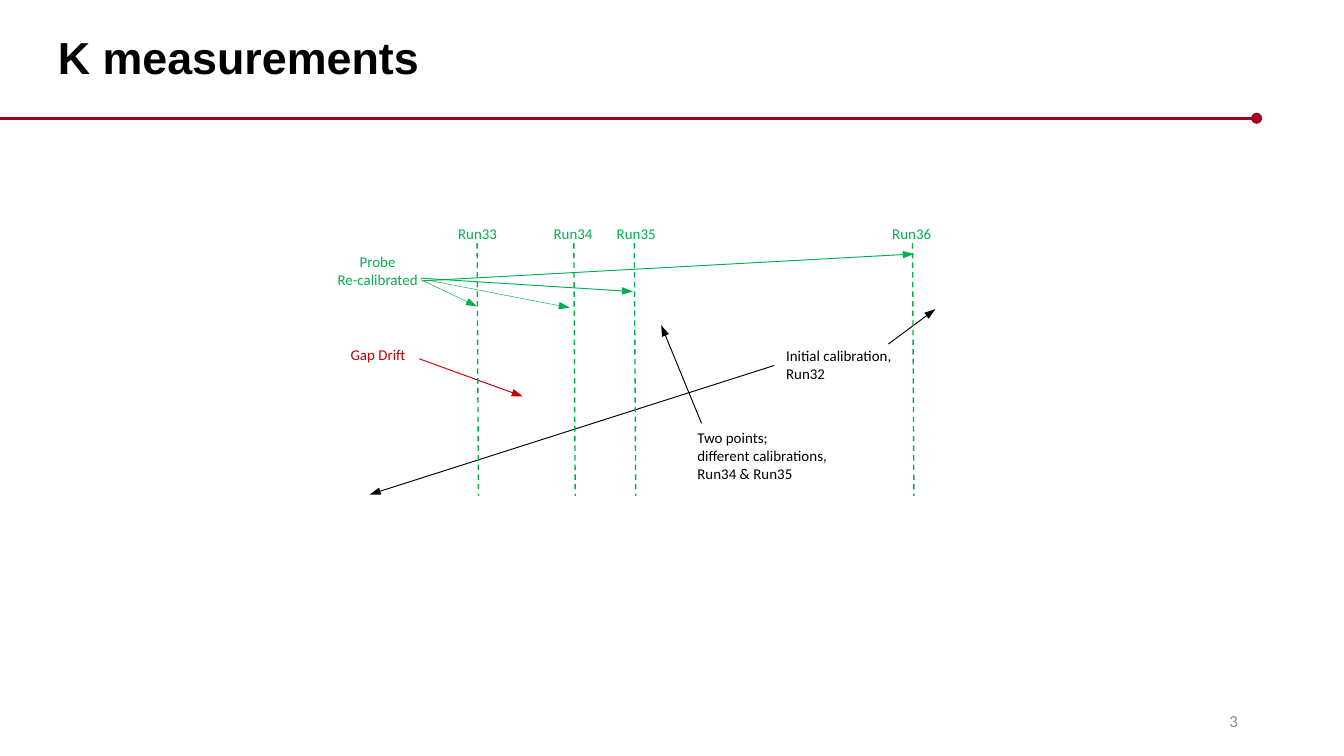
from typing import NamedTuple

from lxml import etree
from pptx import Presentation
from pptx import util as u
from pptx.dml.color import RGBColor
from pptx.enum import dml, shapes, text
from pptx.oxml.ns import qn

BLACK, GREEN, RED, RULE_RED, GREY = "000000", "00B050", "C00000", "A4001D", "8C8C8C"
LEFT, CENTER, RIGHT = text.PP_ALIGN.LEFT, text.PP_ALIGN.CENTER, text.PP_ALIGN.RIGHT
ARROW = {"type": "triangle", "w": "sm", "len": "med"}
DOT = {"type": "oval"}


class Label(NamedTuple):
    lines: list[str]
    left: float
    top: float
    width: float
    height: float
    color: str = BLACK
    align: text.PP_ALIGN = LEFT
    size: float = 8
    anchor: text.MSO_ANCHOR = text.MSO_ANCHOR.TOP


class Line(NamedTuple):
    start: tuple[float, float]
    end: tuple[float, float]
    color: str = BLACK
    width: float = 0.5
    tail: dict[str, str] | None = ARROW
    dashed: bool = False


def rgb(color: str) -> RGBColor:
    return RGBColor.from_string(color)


def set_format(target, values: dict) -> None:
    for name, value in values.items():
        setattr(target, name, value)


def draw_label(slide, label: Label) -> None:
    box = slide.shapes.add_textbox(*map(u.Inches, label[1:5]))
    frame = box.text_frame
    set_format(frame, {"word_wrap": False, "vertical_anchor": label.anchor})
    frame.text = "\n".join(label.lines)
    for paragraph in frame.paragraphs:
        paragraph.alignment = label.align
        set_format(paragraph.font, {"name": "Calibri", "size": u.Pt(label.size)})
        paragraph.font.color.rgb = rgb(label.color)


def draw_line(slide, line: Line) -> None:
    connector = slide.shapes.add_connector(
        shapes.MSO_CONNECTOR.STRAIGHT, *map(u.Inches, line.start + line.end))
    connector.line.width = u.Pt(line.width)
    connector.line.color.rgb = rgb(line.color)
    if line.dashed:
        connector.line.dash_style = dml.MSO_LINE.DASH
    properties = connector._element.spPr
    if line.tail:
        etree.SubElement(properties.find(qn("a:ln")), qn("a:tailEnd"), line.tail)
    etree.SubElement(properties, qn("a:effectLst"))


def draw_title(slide, wording: str) -> None:
    title = slide.shapes.title
    set_format(title, {"left": u.Inches(0.33), "top": u.Inches(0.01),
                       "width": u.Inches(8.62), "height": u.Inches(0.88)})
    frame = title.text_frame
    frame.text = wording
    set_format(frame, {"vertical_anchor": text.MSO_ANCHOR.MIDDLE,
                       "auto_size": text.MSO_AUTO_SIZE.NONE, "word_wrap": True})
    paragraph = frame.paragraphs[0]
    set_format(paragraph, {"alignment": LEFT, "line_spacing": 0.9})
    set_format(paragraph.font, {"name": "Arial", "size": u.Pt(24), "bold": True})
    paragraph.font.color.rgb = rgb(BLACK)


# Run name: position of its marker, left edge of its label
RUNS = {"Run33": (3.55, 3.31), "Run34": (4.27, 4.02),
        "Run35": (4.72, 4.49), "Run36": (6.79, 6.54)}

LABELS = [
    Label(["3"], 7.06, 5.21, 2.25, 0.3, GREY, RIGHT, 9, text.MSO_ANCHOR.MIDDLE),
    Label(["Two points;", "different calibrations,", "Run34 & Run35"],
          5.09, 3.14, 1.55, 0.7),
    Label(["Initial calibration,", "Run32"], 5.75, 2.53, 1.02, 0.39),
    Label(["Probe", "Re-calibrated"], 2.37, 1.83, 0.88, 0.38, GREEN, CENTER),
    Label(["Gap Drift"], 2.51, 2.52, 0.65, 0.28, RED),
]

LINES = [
    Line((0, 0.88), (9.35, 0.88), RULE_RED, 1.75, DOT),
    Line((5.22, 3.15), (4.92, 2.42)),
    Line((6.61, 2.56), (6.96, 2.3)),
    Line((5.76, 2.72), (2.75, 3.68)),
    Line((3.21, 2.09), (4.24, 2.29), GREEN, 0.25),
    Line((3.13, 2.07), (4.71, 2.17), GREEN),
    Line((3.14, 2.09), (6.8, 1.89), GREEN),
    Line((3.13, 2.08), (3.55, 2.28), GREEN, 0.25),
    Line((3.12, 2.67), (3.89, 2.95), RED),
]


def main() -> None:
    deck = Presentation()
    width = u.Inches(10)
    set_format(deck, {"slide_width": width, "slide_height": width * 9 // 16})
    slide = deck.slides.add_slide(deck.slide_layouts[5])
    draw_title(slide, "K measurements")
    for line in LINES:
        draw_line(slide, line)
    for run, (marker, label_left) in RUNS.items():
        draw_line(slide, Line((marker, 1.81), (marker + 0.01, 3.69), GREEN, 0.75, None, True))
        draw_label(slide, Label([run], label_left, 1.62, 0.49, 0.28, GREEN))
    for label in LABELS:
        draw_label(slide, label)
    deck.save("out.pptx")


if __name__ == "__main__":
    main()
